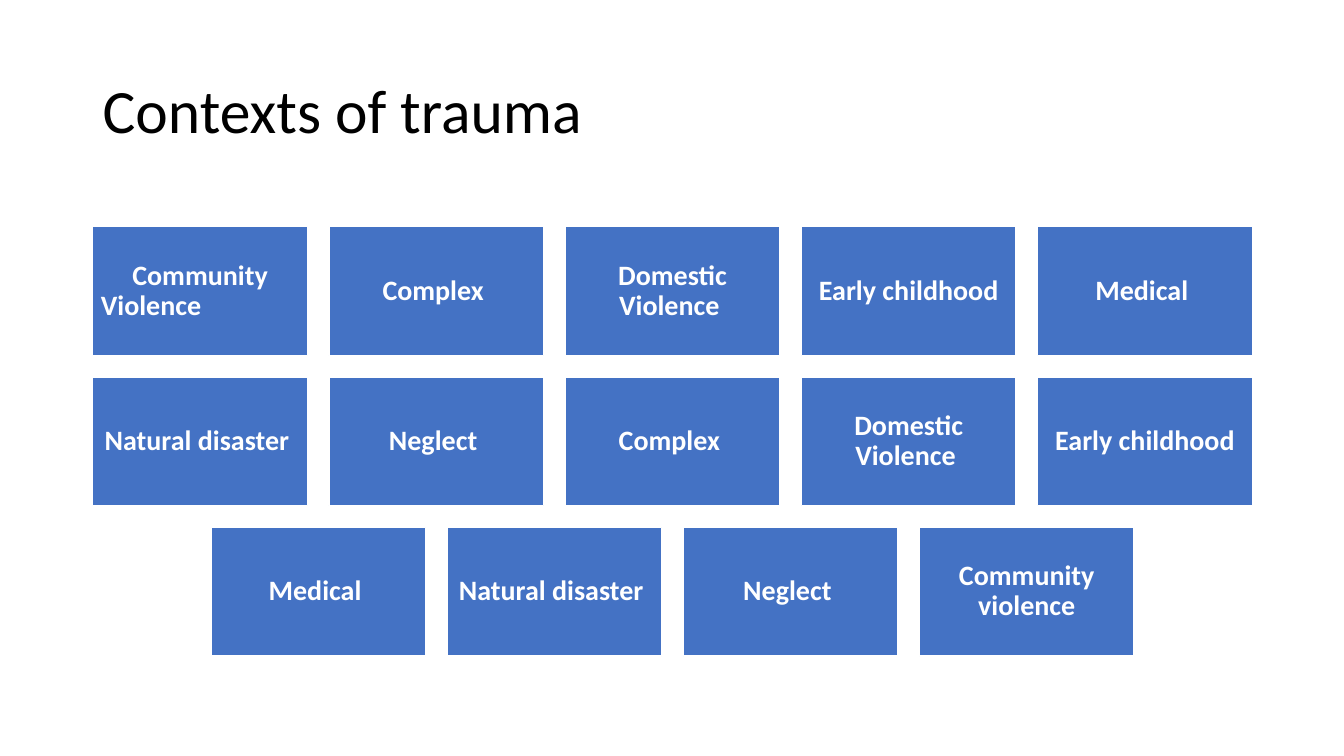
from pptx import Presentation
from pptx.dml.color import RGBColor
from pptx.enum.shapes import MSO_SHAPE
from pptx.enum.text import MSO_ANCHOR, PP_ALIGN
from pptx.util import Inches, Pt

RECTANGLE = MSO_SHAPE.RECTANGLE
MIDDLE = MSO_ANCHOR.MIDDLE
LEFT, CENTER = PP_ALIGN.LEFT, PP_ALIGN.CENTER

COLORS = {"title": "000000", "tile": "4472C4", "tile_text": "FFFFFF", "outline": "FFFFFF"}
FONT = "Calibri"
COLUMNS = 5
GAP_SHARE = 0.1
HEIGHT_SHARE = 0.6

CONTEXTS = [
    "Community Violence \t\t", "Complex ", "Domestic Violence ", "Early childhood", "Medical ",
    "Natural disaster ", "Neglect ", "Complex ", "Domestic Violence ", "Early childhood",
    "Medical ", "Natural disaster ", "Neglect ", "Community violence",
]


def color(role):
    return RGBColor.from_string(COLORS[role])


def write(frame, wording, size, role, align, bold=False):
    frame.word_wrap = True
    frame.vertical_anchor = MIDDLE
    paragraph = frame.paragraphs[0]
    paragraph.text = wording
    paragraph.alignment = align
    paragraph.line_spacing = 0.9
    paragraph.font.name = FONT
    paragraph.font.size = Pt(size)
    paragraph.font.bold = bold
    paragraph.font.color.rgb = color(role)


def add_title(slide, left, top, width, height, wording):
    title = slide.shapes.add_textbox(left, top, width, height)
    write(title.text_frame, wording, 44, "title", LEFT)


def add_tile(slide, left, top, width, height, context):
    tile = slide.shapes.add_shape(RECTANGLE, left, top, width, height)
    tile.shadow.inherit = False
    tile.fill.solid()
    tile.fill.fore_color.rgb = color("tile")
    tile.line.color.rgb = color("outline")
    tile.line.width = Pt(1)
    frame = tile.text_frame
    frame.margin_left = frame.margin_right = Inches(0.08)
    frame.margin_top = frame.margin_bottom = Inches(0.08)
    write(frame, context, 20, "tile_text", CENTER, bold=True)


def add_tile_grid(slide, left, top, width, contexts):
    tile_width = width / (COLUMNS + (COLUMNS - 1) * GAP_SHARE)
    tile_height = tile_width * HEIGHT_SHARE
    gap = tile_width * GAP_SHARE
    for start in range(0, len(contexts), COLUMNS):
        row = contexts[start:start + COLUMNS]
        row_left = left + (COLUMNS - len(row)) * (tile_width + gap) / 2
        row_top = top + start // COLUMNS * (tile_height + gap)
        for column, context in enumerate(row):
            tile_left = row_left + column * (tile_width + gap)
            add_tile(slide, int(tile_left), int(row_top), int(tile_width), int(tile_height), context)


def main():
    deck = Presentation()
    deck.slide_width = Inches(13.33)
    deck.slide_height = Inches(7.5)
    slide = deck.slides.add_slide(deck.slide_layouts[6])
    left, width = Inches(0.92), Inches(11.5)
    add_title(slide, left, Inches(0.4), width, Inches(1.45), "Contexts of trauma")
    add_tile_grid(slide, left, Inches(2.25), width, CONTEXTS)
    deck.save("out.pptx")


if __name__ == "__main__":
    main()
